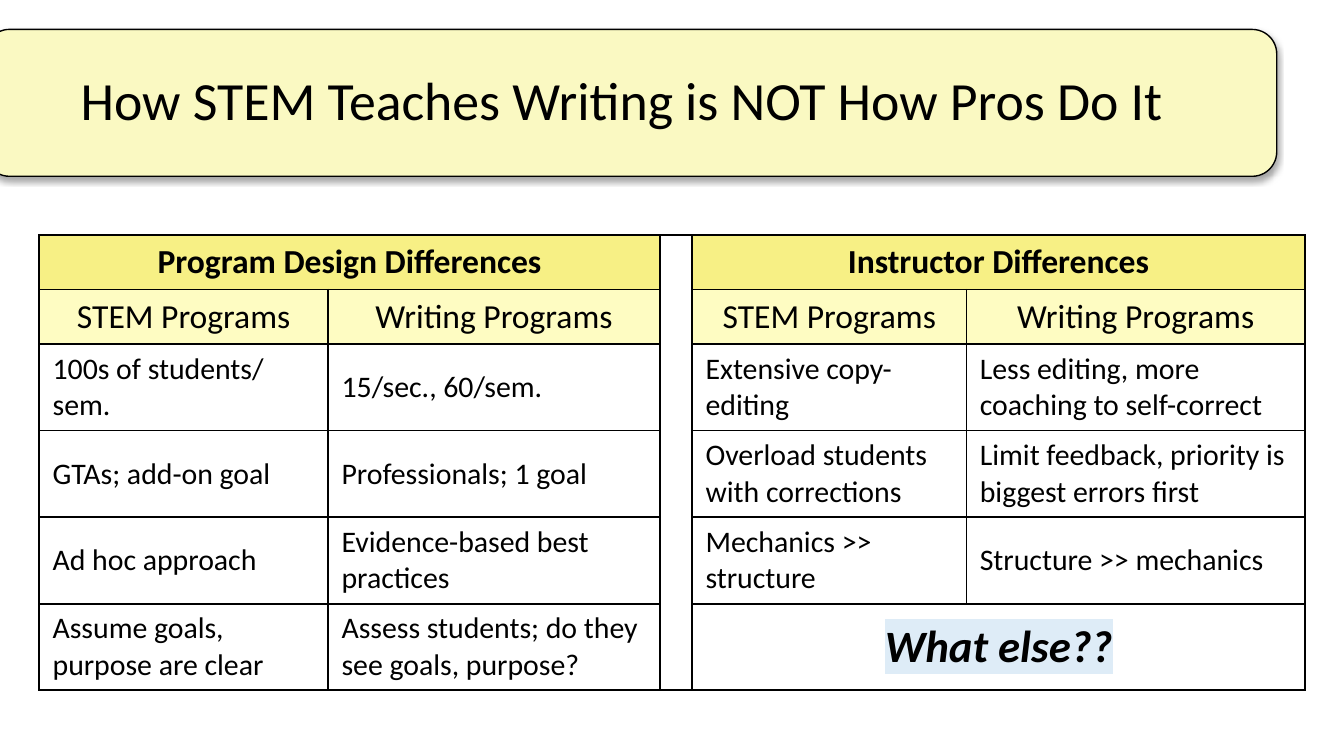
from dataclasses import dataclass

import pptx
import pptx.dml.color
import pptx.enum.shapes
import pptx.enum.text
import pptx.oxml
import pptx.oxml.ns
import pptx.util

Pt = pptx.util.Pt
Align = pptx.enum.text.PP_ALIGN
Anchor = pptx.enum.text.MSO_ANCHOR
NS = pptx.oxml.ns.nsdecls("a")


@dataclass(frozen=True)
class Theme:
    font: str = "Calibri"
    ink: str = "000000"
    banner: str = "FAF9C2"
    group: str = "F7F085"
    subhead: str = "FEFCC2"
    highlight: str = "DEECF7"
    title_size: float = 28.8
    head_size: float = 18
    body_size: float = 16
    prompt_size: float = 24


@dataclass(frozen=True)
class Comparison:
    """One half of the table: a heading over rows of STEM / writing pairs."""
    heading: str
    first_col: int
    rows: tuple[tuple[str, str], ...]
    prompt: str = ""


THEME = Theme()
SUBHEADS = ("STEM Programs", "Writing Programs")
COL_WIDTHS = (154.8, 177.8, 16.6, 146.9, 181.4)
HEAD_HEIGHT, BODY_HEIGHT = 29.2, 46.3
GAP_COL = 2
COMPARISONS = (
    Comparison("Program Design Differences", 0, (
        ("100s of students/ sem.", "15/sec., 60/sem."),
        ("GTAs; add-on goal", "Professionals; 1 goal"),
        ("Ad hoc approach", "Evidence-based best practices"),
        ("Assume goals, purpose are clear",
         "Assess students; do they see goals, purpose?"),
    )),
    Comparison("Instructor Differences", 3, (
        ("Extensive copy-editing", "Less editing, more coaching to self-correct"),
        ("Overload students with corrections",
         "Limit feedback, priority is biggest errors first"),
        ("Mechanics >> structure", "Structure >> mechanics"),
    ), prompt="What else??"),
)


def rgb(value: str) -> pptx.dml.color.RGBColor:
    return pptx.dml.color.RGBColor.from_string(value)


def write(tf, text: str, *, size: float, bold: bool = False, italic: bool = False,
          align=Align.LEFT, highlight: str = "") -> None:
    p = tf.paragraphs[0]
    p.alignment = align
    r = p.add_run()
    r.text = text
    r.font.size, r.font.bold, r.font.italic = Pt(size), bold, italic
    r.font.color.rgb = rgb(THEME.ink)
    r.font.name = THEME.font
    if highlight:
        mark = pptx.oxml.parse_xml(
            f'<a:highlight {NS}><a:srgbClr val="{highlight}"/></a:highlight>')
        r.font.fill._xPr.find(pptx.oxml.ns.qn("a:solidFill")).addnext(mark)


def add_banner(s) -> None:
    sp = s.shapes.add_shape(pptx.enum.shapes.MSO_SHAPE.ROUNDED_RECTANGLE,
                            Pt(-8), Pt(15.8), Pt(692), Pt(78.7))
    sp.fill.solid()
    sp.fill.fore_color.rgb = rgb(THEME.banner)
    sp.line.color.rgb = rgb(THEME.ink)
    sp.line.width = Pt(0.75)
    sp.shadow.inherit = False
    effects = sp._element.spPr.find(pptx.oxml.ns.qn("a:effectLst"))
    effects.append(pptx.oxml.parse_xml(
        f'<a:outerShdw {NS} blurRad="{Pt(3.1)}" dist="{Pt(1.8)}" dir="5400000" '
        f'rotWithShape="0"><a:srgbClr val="{THEME.ink}"><a:alpha val="35000"/>'
        '</a:srgbClr></a:outerShdw>'))
    s.shapes._spTree.insert(2, sp._element)  # behind the title


def add_title(s, text: str) -> None:
    sp = s.shapes.title
    sp.left, sp.top, sp.width, sp.height = Pt(36), Pt(13.7), Pt(648), Pt(78.5)
    tf = sp.text_frame
    tf.word_wrap = True
    tf.auto_size = pptx.enum.text.MSO_AUTO_SIZE.NONE
    tf.vertical_anchor = Anchor.MIDDLE
    write(tf, text, size=THEME.title_size)


def format_cell(cell) -> None:
    """Give the cell thin borders and no fill."""
    tcPr = cell._tc.get_or_add_tcPr()
    for side in "LRTB":
        tcPr.append(pptx.oxml.parse_xml(
            f'<a:ln{side} {NS} w="{Pt(1)}"><a:solidFill><a:srgbClr val="{THEME.ink}"/>'
            f'</a:solidFill></a:ln{side}>'))
    cell.fill.background()


def fill_head(cell, text: str, color: str, bold: bool = False) -> None:
    cell.fill.solid()
    cell.fill.fore_color.rgb = rgb(color)
    write(cell.text_frame, text, size=THEME.head_size, bold=bold, align=Align.CENTER)


def fill_comparison(table, comp: Comparison) -> None:
    left, right = comp.first_col, comp.first_col + 1
    table.cell(0, left).merge(table.cell(0, right))
    fill_head(table.cell(0, left), comp.heading, THEME.group, bold=True)
    for col, text in enumerate(SUBHEADS, left):
        fill_head(table.cell(1, col), text, THEME.subhead)
    for row, pair in enumerate(comp.rows, 2):
        for col, text in enumerate(pair, left):
            cell = table.cell(row, col)
            cell.vertical_anchor = Anchor.MIDDLE
            write(cell.text_frame, text, size=THEME.body_size)
    if comp.prompt:
        row = 2 + len(comp.rows)
        cell = table.cell(row, left)
        cell.merge(table.cell(row, right))
        cell.vertical_anchor = Anchor.MIDDLE
        write(cell.text_frame, comp.prompt, size=THEME.prompt_size, bold=True,
              italic=True, align=Align.CENTER, highlight=THEME.highlight)


def add_comparison_table(s) -> None:
    heights = [HEAD_HEIGHT] * 2 + [BODY_HEIGHT] * 4
    table = s.shapes.add_table(len(heights), len(COL_WIDTHS), Pt(21), Pt(126),
                               Pt(sum(COL_WIDTHS)), Pt(sum(heights))).table
    table.first_row = table.horz_banding = False
    for column, width in zip(table.columns, COL_WIDTHS):
        column.width = Pt(width)
    for row, height in zip(table.rows, heights):
        row.height = Pt(height)
    for cell in table.iter_cells():
        format_cell(cell)
    table.cell(0, GAP_COL).merge(table.cell(len(heights) - 1, GAP_COL))
    for comp in COMPARISONS:
        fill_comparison(table, comp)


def main() -> None:
    prs = pptx.Presentation()
    prs.slide_width, prs.slide_height = Pt(720), Pt(405)
    s = prs.slides.add_slide(prs.slide_layouts[5])
    add_banner(s)
    add_title(s, "How STEM Teaches Writing is NOT How Pros Do It")
    add_comparison_table(s)
    prs.save("out.pptx")


if __name__ == "__main__":
    main()
